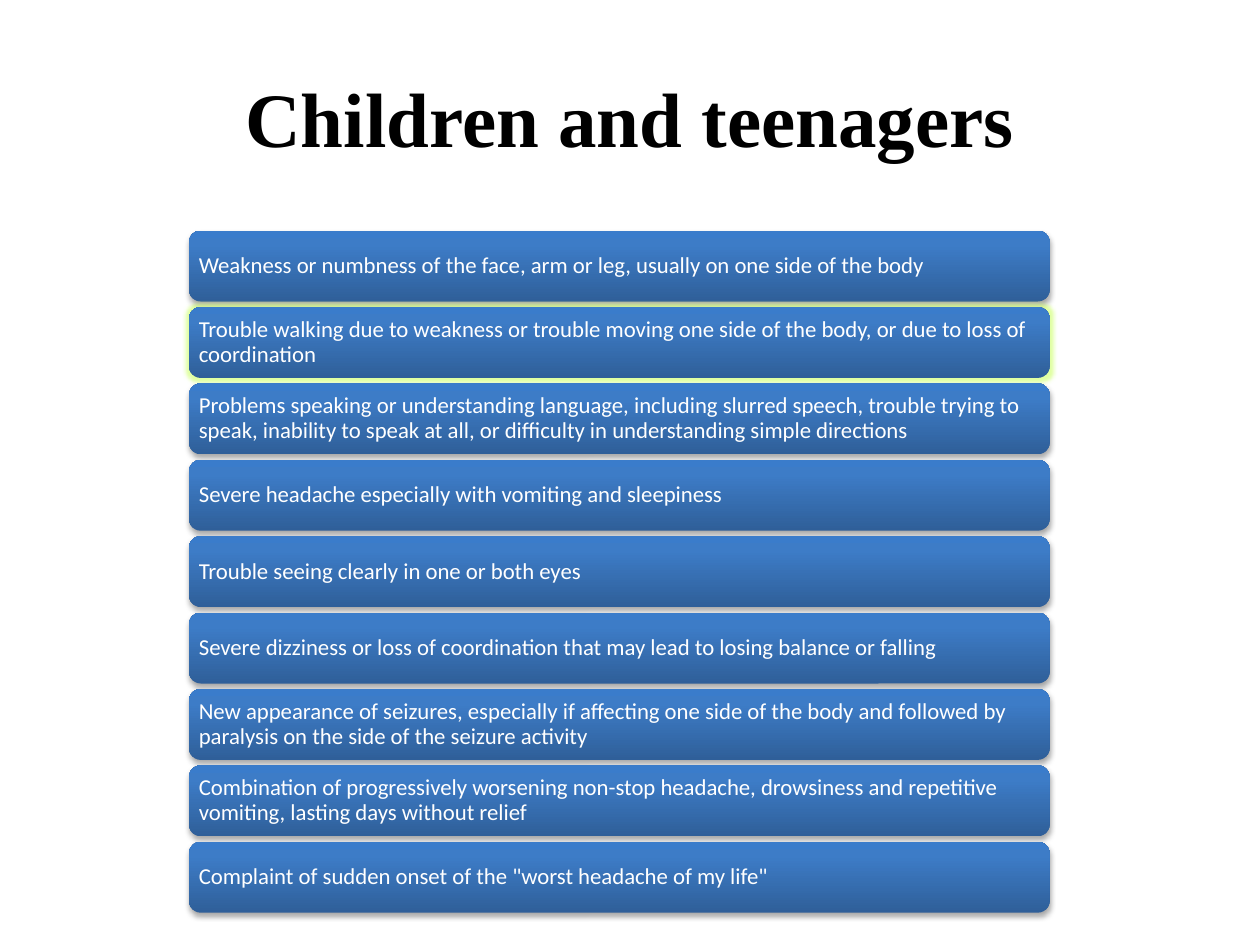
from copy import deepcopy
from dataclasses import dataclass

from lxml import etree
from pptx import Presentation
from pptx.dml.color import RGBColor
from pptx.enum import shapes, text
from pptx.oxml.ns import qn
from pptx.util import Cm, Pt

BLACK = RGBColor(0x00, 0x00, 0x00)
WHITE = RGBColor(0xFF, 0xFF, 0xFF)
GLOW = RGBColor(0xCC, 0xFF, 0x66)
BAR_STOPS = [  # from the bottom edge to the top edge
    (0, RGBColor(0x2F, 0x5F, 0x99)),
    (0.8, RGBColor(0x3D, 0x7C, 0xC7)),
    (1, RGBColor(0x3A, 0x7C, 0xCB)),
]

BAR_LEFT, BAR_TOP, BAR_WIDTH, BAR_HEIGHT = Cm(3.81), Cm(4.65), Cm(17.35), Cm(1.43)
BAR_PITCH = Cm(1.54)
BAR_INSET = Cm(0.13)


@dataclass
class Symptom:
    label: str
    glowing: bool = False


SYMPTOMS = [
    Symptom("Weakness or numbness of the face, arm or leg, usually on one side of the body"),
    Symptom("Trouble walking due to weakness or trouble moving one side of the body, "
            "or due to loss of coordination", glowing=True),
    Symptom("Problems speaking or understanding language, including slurred speech, "
            "trouble trying to speak, inability to speak at all, or difficulty in "
            "understanding simple directions"),
    Symptom("Severe headache especially with vomiting and sleepiness"),
    Symptom("Trouble seeing clearly in one or both eyes"),
    Symptom("Severe dizziness or loss of coordination that may lead to losing balance or falling"),
    Symptom("New appearance of seizures, especially if affecting one side of the body "
            "and followed by paralysis on the side of the seizure activity"),
    Symptom("Combination of progressively worsening non-stop headache, drowsiness and "
            "repetitive vomiting, lasting days without relief"),
    Symptom('Complaint of sudden onset of the "worst headache of my life"'),
]


def write(sp, content: str, *, font: str, size: float, color: RGBColor,
          bold: bool = False, align=text.PP_ALIGN.LEFT, spacing: float = 1.0) -> None:
    tf = sp.text_frame
    tf.word_wrap = True
    tf.vertical_anchor = text.MSO_ANCHOR.MIDDLE
    p = tf.paragraphs[0]
    p.alignment = align
    p.line_spacing = spacing
    r = p.add_run()
    r.text = content
    r.font.name, r.font.size, r.font.bold = font, Pt(size), bold
    r.font.color.rgb = color


def fill_gradient(sp) -> None:
    sp.fill.gradient()
    sp.fill.gradient_angle = 90
    stop_list = sp._element.spPr.find(qn("a:gradFill")).find(qn("a:gsLst"))
    stop_list.append(deepcopy(stop_list[0]))
    for stop, (position, color) in zip(sp.fill.gradient_stops, BAR_STOPS):
        stop.position = position
        stop.color.rgb = color


def add_effect(sp, kind: str, color: RGBColor, opacity: int, **lengths: int) -> None:
    """Give the shape one effect, such as outerShdw or glow; opacity is in percent."""
    sp.shadow.inherit = False
    effects = sp._element.spPr.find(qn("a:effectLst"))
    effect = etree.SubElement(effects, qn(f"a:{kind}"),
                              {name: str(value) for name, value in lengths.items()})
    clr = etree.SubElement(effect, qn("a:srgbClr"), val=str(color))
    etree.SubElement(clr, qn("a:alpha"), val=str(opacity * 1000))


def add_bar(slide, symptom: Symptom, top: int) -> None:
    sp = slide.shapes.add_shape(shapes.MSO_SHAPE.ROUNDED_RECTANGLE,
                                BAR_LEFT, top, BAR_WIDTH, BAR_HEIGHT)
    fill_gradient(sp)
    sp.line.fill.background()
    if symptom.glowing:
        add_effect(sp, "glow", GLOW, 60, rad=Pt(5))
    else:
        add_effect(sp, "outerShdw", BLACK, 35, blurRad=Pt(3.1), dist=Pt(1.8),
                   dir=5400000, rotWithShape=0)
    tf = sp.text_frame
    tf.margin_left = tf.margin_right = tf.margin_top = tf.margin_bottom = BAR_INSET
    write(sp, symptom.label, font="Calibri", size=13, color=WHITE, spacing=0.9)


def main() -> None:
    prs = Presentation()
    prs.slide_width, prs.slide_height = Cm(25.4), Cm(19.05)
    slide = prs.slides.add_slide(prs.slide_layouts[5])

    title = slide.shapes.title
    title.left, title.top, title.width, title.height = Cm(1.27), Cm(0.76), Cm(22.86), Cm(3.18)
    write(title, "Children and teenagers", font="Times New Roman", size=44,
          color=BLACK, bold=True, align=text.PP_ALIGN.CENTER)

    for i, symptom in enumerate(SYMPTOMS):
        add_bar(slide, symptom, BAR_TOP + i * BAR_PITCH)

    prs.save("out.pptx")


if __name__ == "__main__":
    main()
